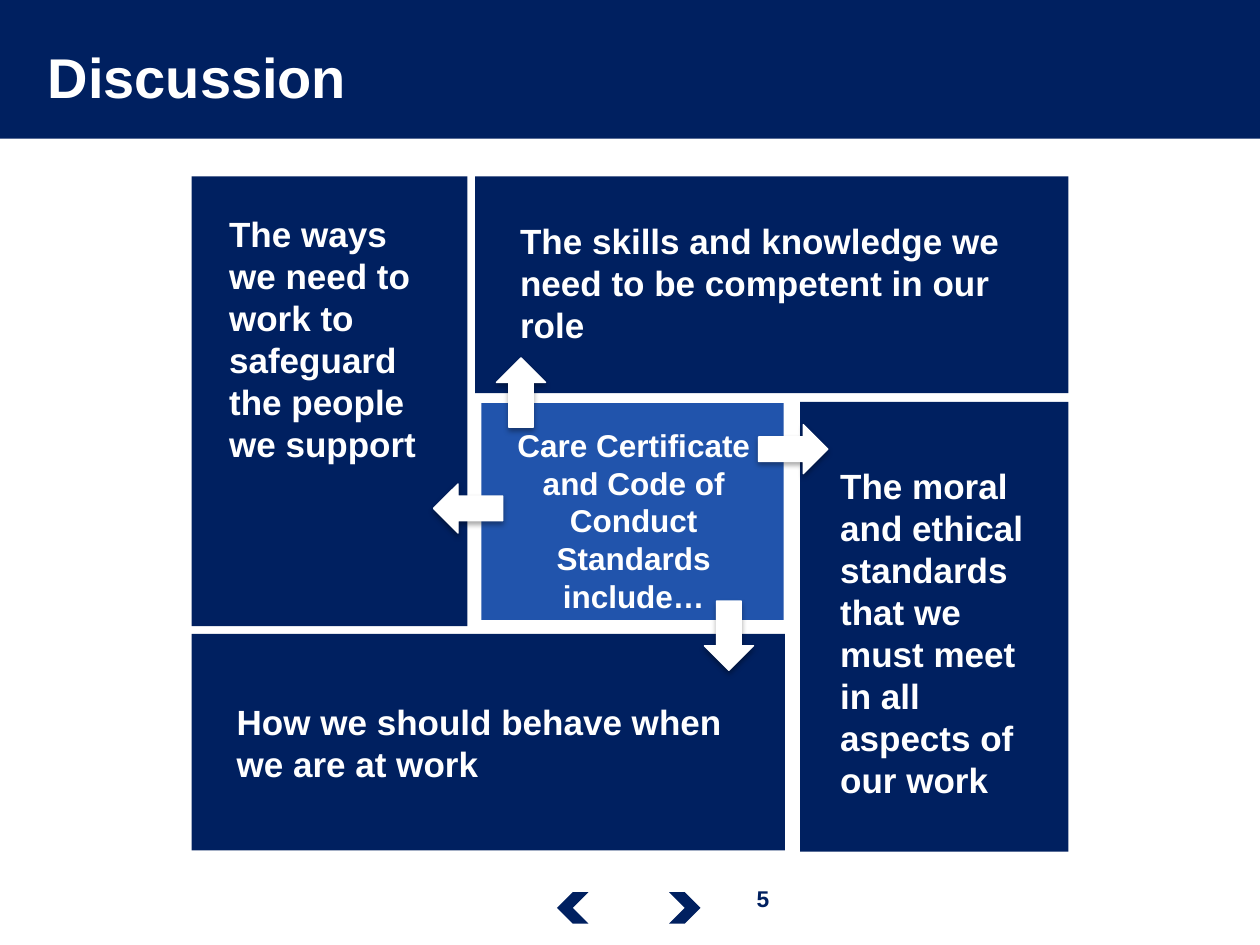
import pptx
import pptx.util
import pptx.dml.color
import pptx.enum.shapes
import pptx.enum.text
import lxml.etree
from pptx.util import Inches

SHAPE = pptx.enum.shapes.MSO_SHAPE
ALIGN = pptx.enum.text.PP_ALIGN
ANCHOR = pptx.enum.text.MSO_ANCHOR

THEME = {
    "font": "Arial",
    "navy": "002060", "blue": "2154AC", "white": "FFFFFF",
    "title": 32, "panel": 20, "centre": 18, "number": 13,
}

TITLE = ("Discussion", (0.28, 0.1, 7.9, 1.01))
PAGE_NUMBER = ("5", (5.7, 6.97, 0.71, 0.32))
BANNER = (-0.02, 0, 10.02, 1.1)

PANELS = [
    ("How we should behave when we are at work",
     (1.52, 5.03, 4.71, 1.72), (1.78, 5.51, 4.32, 0.77)),
    ("The skills and knowledge we need to be competent in our role",
     (3.77, 1.4, 4.71, 1.72), (4.03, 1.69, 4.06, 1.11)),
    ("The moral and ethical standards that we must meet in all aspects of our work",
     (6.35, 3.19, 2.13, 3.57), (6.57, 3.64, 1.76, 2.79)),
    ("The ways we need to work to safeguard the people we support",
     (1.52, 1.4, 2.19, 3.57), (1.72, 1.64, 1.78, 2.12)),
]
CENTRE = ("Care Certificate and Code of Conduct Standards include…",
          (3.82, 3.2, 2.4, 1.72), (3.86, 3.33, 2.34, 1.62))

ARROW_SIZE = (0.39, 0.55)
ARROWS = [(3.52, 3.76, 90), (5.59, 4.77, 0), (6.1, 3.29, 270), (3.94, 2.84, 180)]
CHEVRON_SIZE = (0.25, 0.25)
CHEVRONS = [(5.31, 7.08, 0), (4.42, 7.08, 180)]

SHADOW = (
    '<a:effectLst xmlns:a="http://schemas.openxmlformats.org/drawingml/2006/main">'
    '<a:outerShdw blurRad="39370" dist="22860" dir="5400000" rotWithShape="0">'
    '<a:srgbClr val="000000"><a:alpha val="35000"/></a:srgbClr>'
    '</a:outerShdw></a:effectLst>'
)


def colour(key):
    return pptx.dml.color.RGBColor.from_string(THEME[key])


def add_block(slide, kind, box, fill, rotation=0):
    block = slide.shapes.add_shape(kind, *map(Inches, box))
    block.rotation = rotation
    block.shadow.inherit = False
    block.fill.solid()
    block.fill.fore_color.rgb = colour(fill)
    block.line.fill.background()
    return block


def add_text(slide, text, box, size="panel", ink="white",
             align=ALIGN.LEFT, anchor=ANCHOR.TOP):
    frame = slide.shapes.add_textbox(*map(Inches, box)).text_frame
    frame.word_wrap = True
    frame.vertical_anchor = anchor
    paragraph = frame.paragraphs[0]
    paragraph.alignment = align
    run = paragraph.add_run()
    run.text = text
    run.font.name = THEME["font"]
    run.font.size = pptx.util.Pt(THEME[size])
    run.font.bold = True
    run.font.color.rgb = colour(ink)


def add_arrow(slide, left, top, rotation):
    arrow = add_block(slide, SHAPE.DOWN_ARROW, (left, top, *ARROW_SIZE), "white", rotation)
    arrow.line.color.rgb = colour("white")
    arrow.line.width = pptx.util.Pt(0.75)
    properties = arrow.element.spPr
    effects = properties.find(pptx.oxml.ns.qn("a:effectLst"))
    properties.replace(effects, lxml.etree.fromstring(SHADOW))


def main():
    deck = pptx.Presentation()
    deck.slide_width, deck.slide_height = Inches(10), Inches(7.5)
    slide = deck.slides.add_slide(deck.slide_layouts[6])

    add_block(slide, SHAPE.RECTANGLE, BANNER, "navy")
    add_text(slide, *TITLE, size="title", anchor=ANCHOR.MIDDLE)
    add_text(slide, *PAGE_NUMBER, size="number", ink="navy", align=ALIGN.CENTER)
    for left, top, rotation in CHEVRONS:
        add_block(slide, SHAPE.CHEVRON, (left, top, *CHEVRON_SIZE), "navy", rotation)

    for statement, panel, text_area in PANELS:
        add_block(slide, SHAPE.RECTANGLE, panel, "navy")
        add_text(slide, statement, text_area)
    statement, panel, text_area = CENTRE
    add_block(slide, SHAPE.RECTANGLE, panel, "blue")
    add_text(slide, statement, text_area, size="centre", align=ALIGN.CENTER)

    for arrow in ARROWS:
        add_arrow(slide, *arrow)

    deck.save("out.pptx")


if __name__ == "__main__":
    main()
